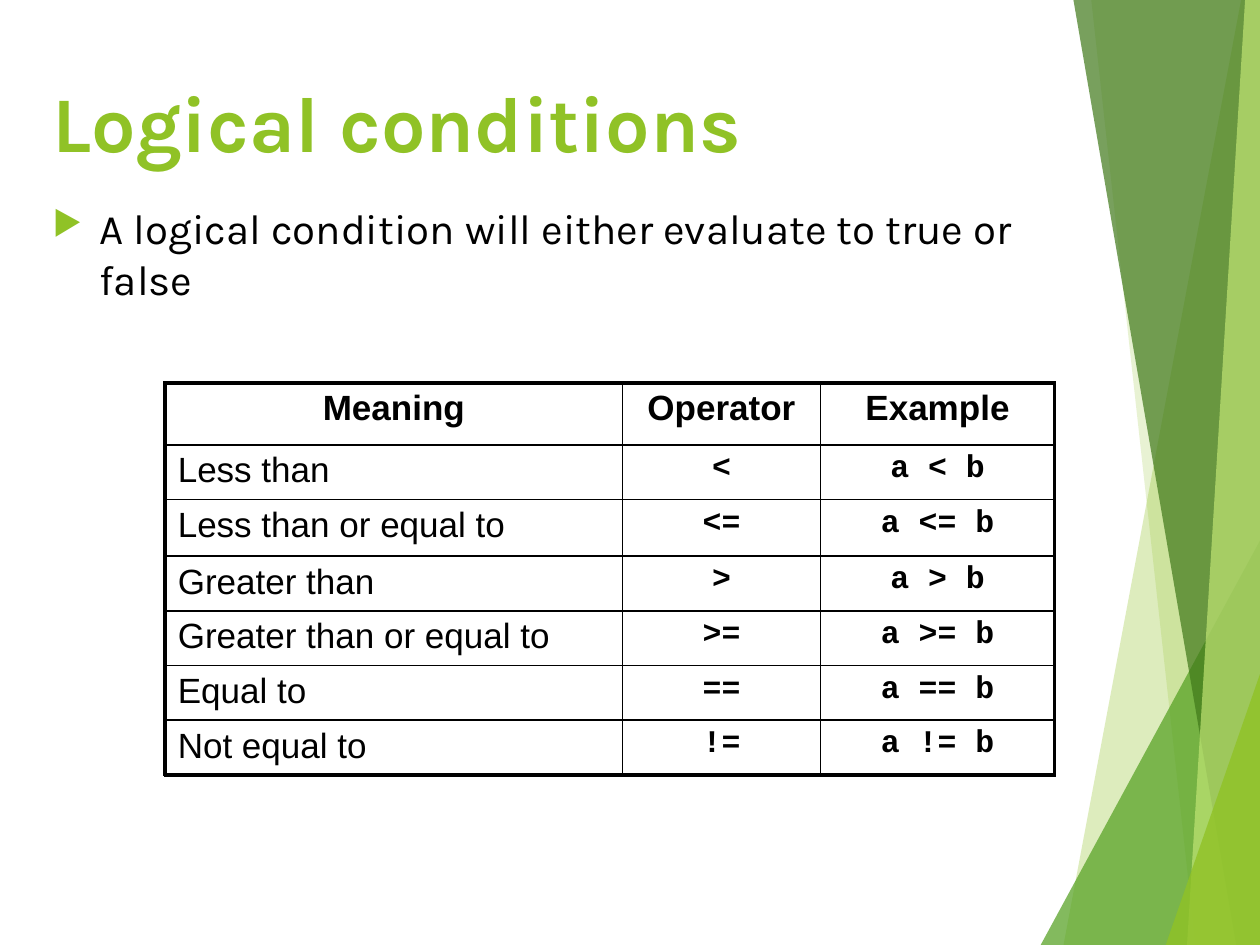
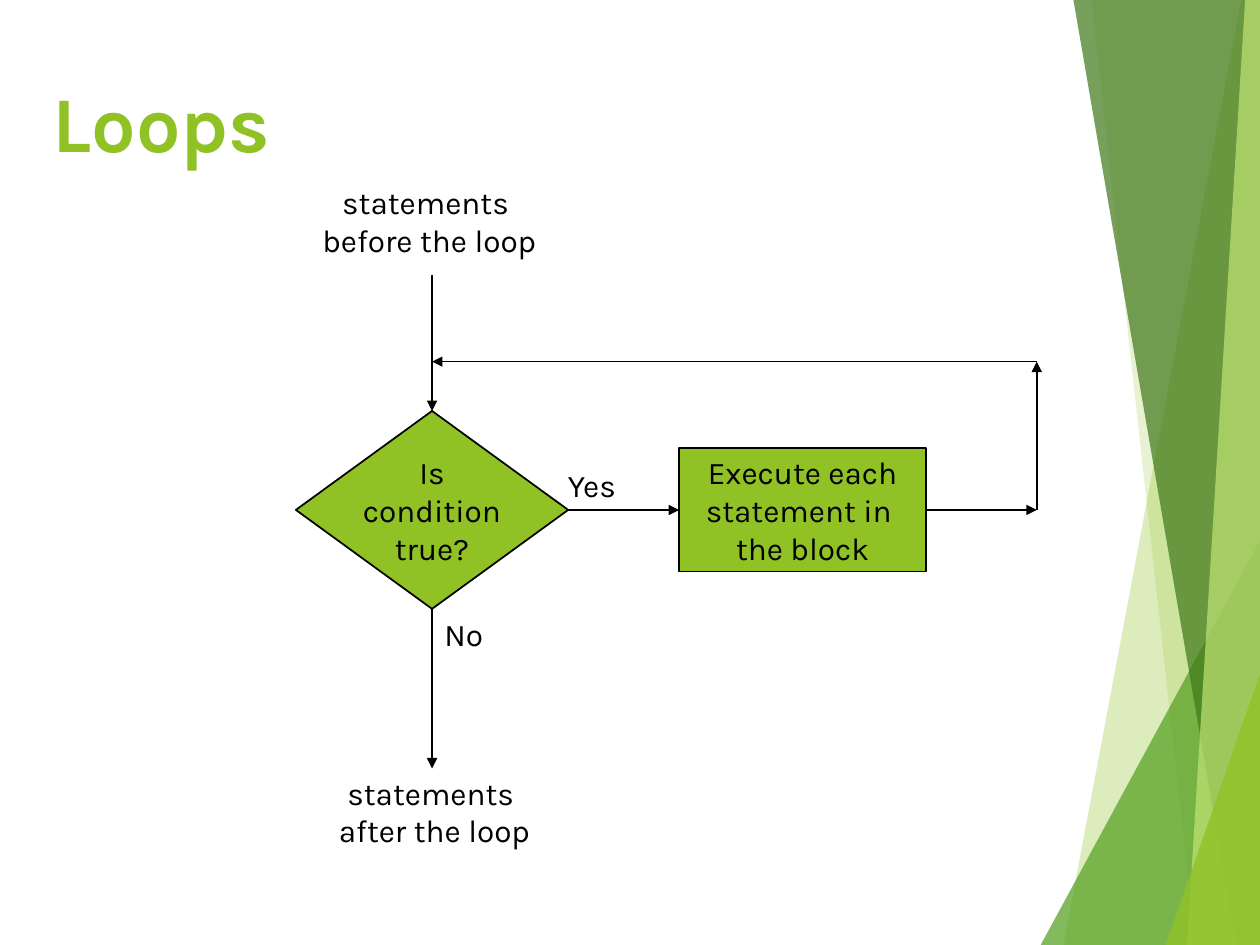
from lxml import etree
from pptx import Presentation
from pptx import util as u
from pptx.dml.color import RGBColor
from pptx.enum import shapes, text
from pptx.oxml.ns import qn

WIDTH, HEIGHT = 25.4, 19.05
GREEN, BLACK = "90C226", "000000"
BANDS = [
    ((25.02, 0), 21.44, GREEN, 30),
    ((22, 0), 24.1, GREEN, 20),
    ((WIDTH, 10.9), 20.98, "54A021", 72),
    ((21.64, 0), 24.92, "3F7819", 70),
    ((25.1, 0), 23.93, "C0E474", 70),
    ((WIDTH, 13.59), 23.5, GREEN, 80),
]
TITLE = {"size": u.Pt(45), "name": "Karla", "bold": True}
BODY = {"size": u.Pt(24), "name": "Karla"}
LABEL = {"size": u.Pt(18), "name": "Karla"}
HEAD = {"size": u.Pt(20), "name": "Arial", "bold": True}
MEANING = {"size": u.Pt(20), "name": "Arial", "bold": False}
CODE = {"size": u.Pt(18), "name": "Courier New", "bold": True}
LEFT, CENTER = text.PP_ALIGN.LEFT, text.PP_ALIGN.CENTER
TOP, MIDDLE = text.MSO_ANCHOR.TOP, text.MSO_ANCHOR.MIDDLE


def rgb(value):
    return RGBColor.from_string(value)


def add_tag(parent, name, **attrs):
    return etree.SubElement(parent, qn(f"a:{name}"), attrs)


def add_color(parent, value):
    return add_tag(parent, "srgbClr", val=value)


class Deck:
    def __init__(self):
        self.prs = Presentation()
        self.prs.slide_width, self.prs.slide_height = u.Cm(WIDTH), u.Cm(HEIGHT)
        self.s = None

    def slide(self, title):
        self.s = self.prs.slides.add_slide(self.prs.slide_layouts[6])
        for band in BANDS:
            self.band(*band)
        self.textbox(title, (0.81, 0.94, 20.17, 3.02), TITLE, color=GREEN, anchor=MIDDLE)

    def paint(self, sp, color):
        sp.shadow.inherit = False
        sp.fill.solid()
        sp.fill.fore_color.rgb = rgb(color)

    def outline(self, sp, width):
        sp.line.color.rgb = rgb(BLACK)
        sp.line.width = u.Pt(width)

    def band(self, top, bottom_x, color, opacity):
        points = [(bottom_x, HEIGHT), (WIDTH, HEIGHT), (WIDTH, top[1])]
        builder = self.s.shapes.build_freeform(u.Cm(top[0]), u.Cm(top[1]), 1.0)
        builder.add_line_segments([(u.Cm(x), u.Cm(y)) for x, y in points], close=True)
        sp = builder.convert_to_shape()
        self.paint(sp, color)
        sp.line.fill.background()
        clr = sp._element.spPr.find(qn("a:solidFill"))[0]
        add_tag(clr, "alpha", val=str(opacity * 1000))

    def set_text(self, tf, content, font, color=BLACK, align=LEFT):
        tf.text = content
        for p in tf.paragraphs:
            p.alignment = align
            for r in p.runs:
                for key, value in font.items():
                    setattr(r.font, key, value)
                r.font.color.rgb = rgb(color)

    def textbox(self, content, box, font, color=BLACK, align=LEFT, anchor=TOP, wrap=True):
        tf = self.s.shapes.add_textbox(*map(u.Cm, box)).text_frame
        tf.word_wrap = wrap
        tf.vertical_anchor = anchor
        if not wrap:
            tf.auto_size = text.MSO_AUTO_SIZE.SHAPE_TO_FIT_TEXT
        self.set_text(tf, content, font, color, align)
        return tf

    def label(self, content, box, align=CENTER):
        self.textbox(content, box, LABEL, align=align, wrap=False)

    def bullet(self, content, box):
        p = self.textbox(content, box, BODY).paragraphs[0]
        p.space_before = u.Pt(20)
        pPr = p._p.get_or_add_pPr()
        pPr.set("marL", str(u.Cm(0.95)))
        pPr.set("indent", str(-u.Cm(0.95)))
        add_color(add_tag(pPr, "buClr"), GREEN)
        add_tag(pPr, "buSzPct", val="80000")
        add_tag(pPr, "buChar", char="▶")

    def step(self, kind, content, box, line_width):
        sp = self.s.shapes.add_shape(kind, *map(u.Cm, box))
        self.paint(sp, GREEN)
        self.outline(sp, line_width)
        tf = sp.text_frame
        tf.word_wrap = False
        tf.vertical_anchor = MIDDLE
        self.set_text(tf, content, LABEL, align=CENTER)

    def arrow(self, start, end):
        sp = self.s.shapes.add_connector(
            shapes.MSO_CONNECTOR.STRAIGHT, *map(u.Cm, start + end))
        self.outline(sp, 1)
        spPr = sp._element.spPr
        add_tag(spPr.find(qn("a:ln")), "tailEnd", type="triangle")
        add_tag(spPr, "effectLst")

    def border(self, cell, widths):
        tcPr = cell._tc.get_or_add_tcPr()
        for side, width in widths.items():
            ln = add_tag(tcPr, f"ln{side}", w=str(u.Pt(width)))
            add_color(add_tag(ln, "solidFill"), BLACK)

    def table(self, rows, left, top, widths, heights):
        box = left, top, sum(widths), sum(heights)
        tbl = self.s.shapes.add_table(len(rows), len(widths), *map(u.Cm, box)).table
        tbl.first_row = tbl.horz_banding = False
        for column, width in zip(tbl.columns, widths):
            column.width = u.Cm(width)
        for row, height in zip(tbl.rows, heights):
            row.height = u.Cm(height)
        last_row, last_col = len(rows) - 1, len(widths) - 1
        for i, row in enumerate(rows):
            for j, content in enumerate(row):
                cell = tbl.cell(i, j)
                outer = {"L": j == 0, "R": j == last_col, "T": i == 0, "B": i == last_row}
                self.border(cell, {side: 2.25 if edge else 1 for side, edge in outer.items()})
                cell.fill.background()
                font = HEAD if i == 0 else CODE if j else MEANING
                align = CENTER if i == 0 or j else LEFT
                self.set_text(cell.text_frame, content, font, align=align)


def logical_conditions(deck):
    deck.slide("Logical conditions")
    deck.bullet("A logical condition will either evaluate to true or false",
                (0.81, 3.96, 20.17, 13.31))
    operators = {
        "Less than": "<",
        "Less than or equal to": "<=",
        "Greater than": ">",
        "Greater than or equal to": ">=",
        "Equal to": "==",
        "Not equal to": "!=",
    }
    rows = [("Meaning", "Operator", "Example")]
    rows += [(meaning, op, f"a {op} b") for meaning, op in operators.items()]
    deck.table(rows, 3.33, 7.72, (9.22, 3.99, 4.72), (1.25, 1.04, 1.14) + (1.04,) * 4)


def loops(deck):
    deck.slide("Loops")
    entry_x, return_x = 8.71, 20.9
    return_y, step_y = 7.29, 10.28
    test_w, test_h, block_w, block_h = 5.49, 3.99, 4.98, 2.49
    block_x = 13.69
    test_top, test_bottom = step_y - test_h / 2, step_y + test_h / 2
    deck.step(shapes.MSO_SHAPE.RECTANGLE, "Execute each\vstatement in \vthe block",
              (block_x, step_y - block_h / 2, block_w, block_h), 0.75)
    deck.step(shapes.MSO_SHAPE.DIAMOND, "Is\vcondition\ntrue?",
              (entry_x - test_w / 2, test_top, test_w, test_h), 1)
    for start, end in [
        ((entry_x, test_bottom), (entry_x, 15.49)),
        ((entry_x + test_w / 2, step_y), (block_x, step_y)),
        ((return_x, return_y), (entry_x, return_y)),
        ((return_x, step_y), (return_x, return_y)),
        ((entry_x, 5.54), (entry_x, test_top)),
        ((block_x + block_w, step_y), (return_x, step_y)),
    ]:
        deck.arrow(start, end)
    deck.label("statements \vbefore the loop", (6.1, 3.56, 5.11, 1.78))
    deck.label("statements \vafter the loop", (6.5, 15.47, 4.52, 1.78))
    deck.label("No", (entry_x, test_bottom, 1.35, 1.02), LEFT)
    deck.label("Yes", (11.2, 9.27, 1.65, 1.02), LEFT)


def main():
    deck = Deck()
    logical_conditions(deck)
    loops(deck)
    deck.prs.save("out.pptx")


if __name__ == "__main__":
    main()
